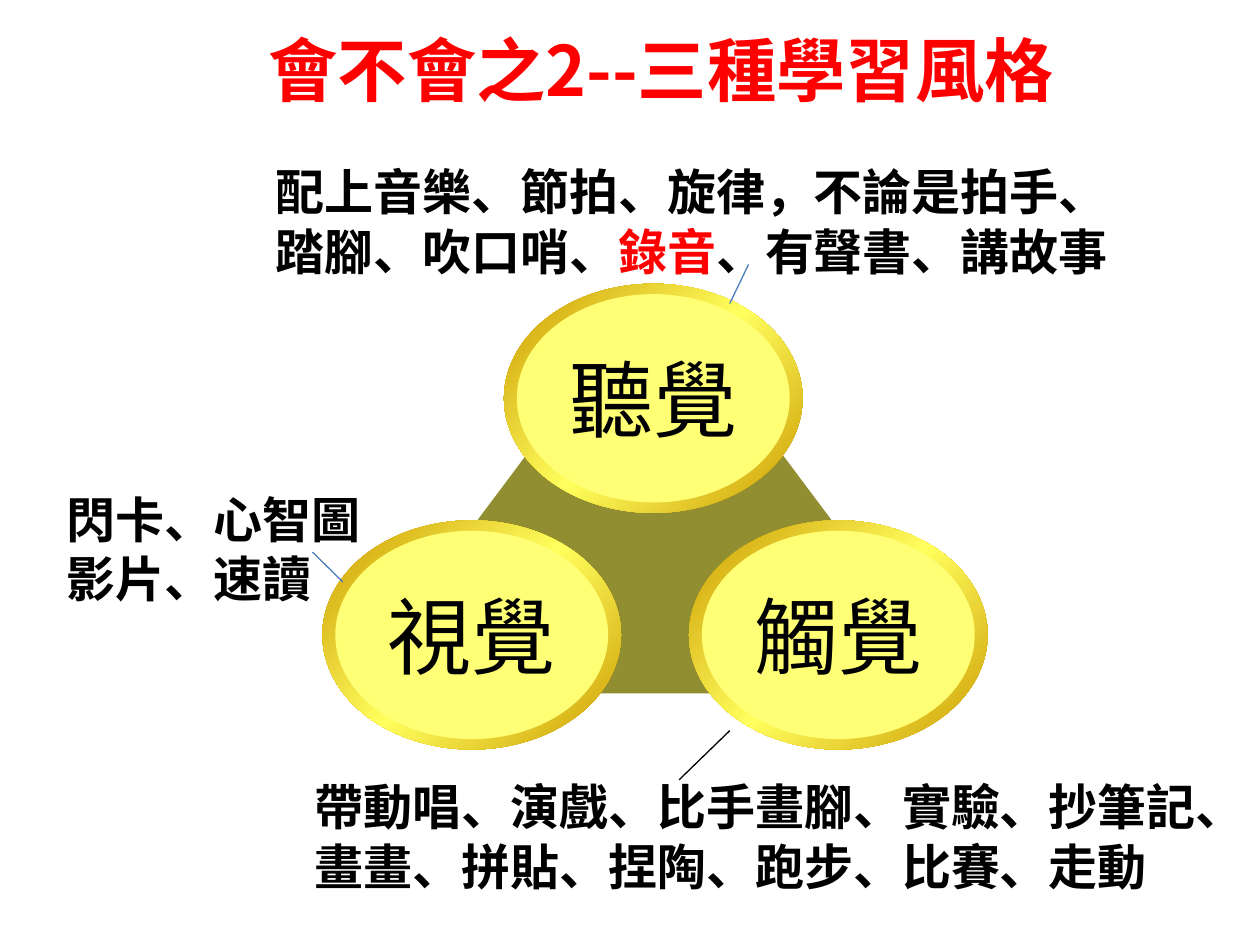
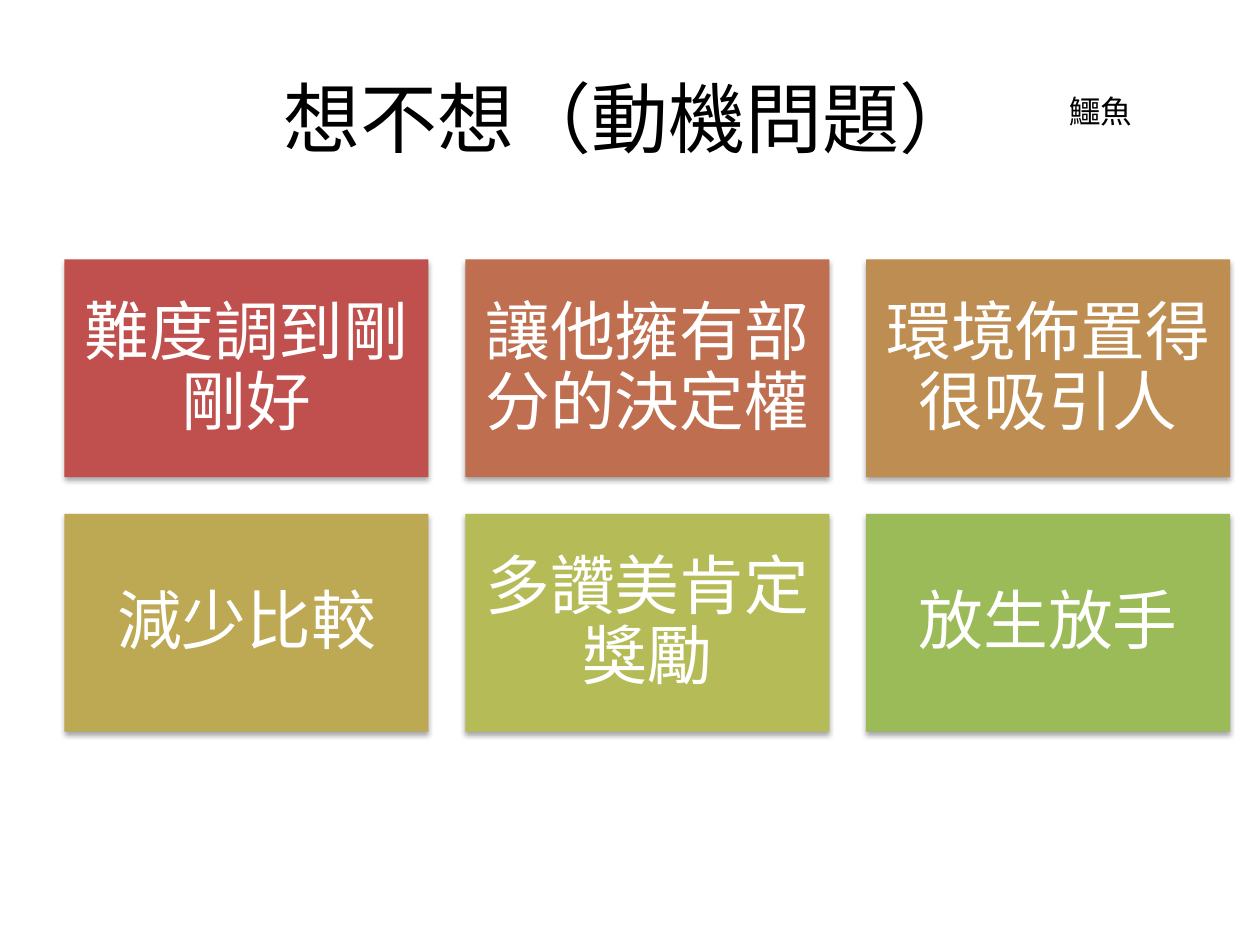
from dataclasses import dataclass
from typing import Optional

from lxml.etree import SubElement
from pptx import Presentation
from pptx.dml.color import RGBColor
from pptx.enum.shapes import MSO_CONNECTOR, MSO_SHAPE
from pptx.enum.text import MSO_ANCHOR, PP_ALIGN
from pptx.oxml.ns import qn
from pptx.util import Cm, Pt

BLACK = RGBColor(0x00, 0x00, 0x00)
WHITE = RGBColor(0xFF, 0xFF, 0xFF)
RED = RGBColor(0xFF, 0x00, 0x00)
BLUE = RGBColor(0x4B, 0x7E, 0xBC)
OLIVE = RGBColor(0x90, 0x8E, 0x30)
YELLOW = RGBColor(0xFF, 0xFF, 0x75)
RING_STOPS = ((0, "CC9900"), (50, "FFFF5D"), (100, "CC9900"))
CJK_FONT = "Noto Sans CJK SC"
LATIN_FONT = "Calibri"
RING_WIDTH, RING_HEIGHT = 6.02, 4.62
RIM_X, RIM_Y = 0.26, 0.21
TILE_WIDTH, TILE_HEIGHT, TILE_GAP = 7.34, 4.39, 0.74
TILE_LEFT, TILE_TOP, TILE_COLUMNS = 1.3, 5.23, 3


@dataclass(frozen=True)
class Frame:
    """A rectangle in centimetres."""
    left: float
    top: float
    width: float
    height: float

    def lengths(self) -> tuple:
        """Return the four sides as slide lengths."""
        return Cm(self.left), Cm(self.top), Cm(self.width), Cm(self.height)


@dataclass(frozen=True)
class Style:
    """How a run and its line look."""
    size: float
    color: RGBColor = BLACK
    bold: bool = False
    font: str = CJK_FONT
    pitch: Optional[float] = None


@dataclass(frozen=True)
class Sense:
    """A learning style and the place of its ring."""
    name: str
    left: float
    top: float


@dataclass(frozen=True)
class Note:
    """Activities, as lines of (text, colour) runs."""
    frame: Frame
    lines: tuple
    wrap: bool = True


@dataclass(frozen=True)
class Pointer:
    """A line from a ring to its note."""
    start: tuple
    end: tuple
    color: RGBColor


@dataclass(frozen=True)
class Tile:
    """A motivation tip and its fill."""
    text: str
    color: RGBColor


NOTE_STYLE = Style(28, bold=True, pitch=34)
SENSE_STYLE = Style(48, font=LATIN_FONT)
TILE_STYLE = Style(37, WHITE, pitch=40)

SENSES = (
    Sense("聽覺", 10.16, 5.72),
    Sense("視覺", 6.5, 10.49),
    Sense("觸覺", 13.89, 10.49),
)
NOTES = (
    Note(Frame(6.1, 15.52, 19.32, 2.64), (
        (("帶動唱、演戲、比手畫腳、實驗、抄筆記、", BLACK),),
        (("畫畫、拼貼、捏陶、跑步、比賽、走動", BLACK),))),
    Note(Frame(1.09, 9.73, 6.5, 2.64), (
        (("閃卡、心智圖", BLACK),),
        (("影片、速讀", BLACK),)), wrap=False),
    Note(Frame(5.31, 3.12, 17.4, 2.64), (
        (("配上音樂、節拍、旋律，不論是拍手、踏腳、吹口哨、", BLACK),
         ("錄音", RED), ("、有聲書、講故事", BLACK)),)),
)
POINTERS = (
    Pointer((14.71, 6.12), (15.09, 5.33), BLUE),
    Pointer((6.91, 11.73), (6.3, 11.13), BLUE),
    Pointer((14.71, 14.73), (13.69, 15.72), BLACK),
)
TILES = (
    Tile("難度調到剛剛好", RGBColor(0xC0, 0x50, 0x4D)),
    Tile("讓他擁有部分的決定權", RGBColor(0xBF, 0x6F, 0x4F)),
    Tile("環境佈置得很吸引人", RGBColor(0xBE, 0x8D, 0x52)),
    Tile("減少比較", RGBColor(0xBD, 0xA9, 0x54)),
    Tile("多讚美肯定獎勵", RGBColor(0xB5, 0xBC, 0x57)),
    Tile("放生放手", RGBColor(0x9B, 0xBB, 0x59)),
)


def write_lines(shape, lines: tuple, style: Style, align=PP_ALIGN.LEFT,
                anchor=MSO_ANCHOR.TOP, wrap: bool = True) -> None:
    """Fill a shape with lines of (text, colour) runs."""
    text_frame = shape.text_frame
    text_frame.word_wrap = wrap
    text_frame.vertical_anchor = anchor
    for index, line in enumerate(lines):
        para = text_frame.add_paragraph() if index else text_frame.paragraphs[0]
        para.alignment = align
        if style.pitch:
            para.line_spacing = Pt(style.pitch)
        for text, color in line:
            span = para.add_run()
            span.text = text
            span.font.size = Pt(style.size)
            span.font.bold = style.bold
            span.font.color.rgb = color
            span.font.name = style.font
            if style.font == CJK_FONT:
                east_asian = SubElement(span.font._element, qn("a:ea"))
                east_asian.set("typeface", style.font)


def write_centred(shape, text: str, style: Style, wrap: bool = True) -> None:
    """Write one line in the middle of a shape."""
    write_lines(shape, (((text, style.color),),), style,
                PP_ALIGN.CENTER, MSO_ANCHOR.MIDDLE, wrap)


def add_title(page, frame: Frame, text: str, style: Style) -> None:
    """Add a centred slide title."""
    write_centred(page.shapes.add_textbox(*frame.lengths()), text, style)


def add_solid(page, kind, frame: Frame, color: RGBColor):
    """Add a flat shape without outline."""
    shape = page.shapes.add_shape(kind, *frame.lengths())
    shape.shadow.inherit = False
    shape.line.fill.background()
    shape.fill.solid()
    shape.fill.fore_color.rgb = color
    return shape


def add_golden_fill(shape) -> None:
    """Give a shape the diagonal golden gradient."""
    shape.fill.gradient()
    shape.fill.gradient_angle = 315
    stops = shape._element.spPr.find(".//" + qn("a:gsLst"))
    for stop in list(stops):
        stops.remove(stop)
    for percent, color in RING_STOPS:
        stop = SubElement(stops, qn("a:gs"), pos=str(percent * 1000))
        SubElement(stop, qn("a:srgbClr"), val=color)


def add_drop_shadow(shape) -> None:
    """Add a soft shadow below a shape."""
    effects = shape._element.spPr.find(qn("a:effectLst"))
    shadow = SubElement(effects, qn("a:outerShdw"), blurRad=str(Pt(3.1)),
                        dist=str(Pt(1.8)), dir="5400000", rotWithShape="0")
    color = SubElement(shadow, qn("a:srgbClr"), val="000000")
    SubElement(color, qn("a:alpha"), val="35000")


def add_sense(page, sense: Sense) -> None:
    """Add a golden ring around a named disc."""
    ring_frame = Frame(sense.left, sense.top, RING_WIDTH, RING_HEIGHT)
    add_golden_fill(add_solid(page, MSO_SHAPE.OVAL, ring_frame, YELLOW))
    disc_frame = Frame(sense.left + RIM_X, sense.top + RIM_Y,
                       RING_WIDTH - 2 * RIM_X, RING_HEIGHT - 2 * RIM_Y)
    disc = add_solid(page, MSO_SHAPE.OVAL, disc_frame, YELLOW)
    write_centred(disc, sense.name, SENSE_STYLE, wrap=False)


def add_pointer(page, pointer: Pointer) -> None:
    """Add a thin straight line."""
    ends = [Cm(value) for value in pointer.start + pointer.end]
    line = page.shapes.add_connector(MSO_CONNECTOR.STRAIGHT, *ends)
    line.line.color.rgb = pointer.color
    line.line.width = Pt(0.75)
    SubElement(line._element.spPr, qn("a:effectLst"))


def add_tile(page, index: int, tile: Tile) -> None:
    """Add a tip at its place in the grid."""
    row, column = divmod(index, TILE_COLUMNS)
    frame = Frame(TILE_LEFT + column * (TILE_WIDTH + TILE_GAP),
                  TILE_TOP + row * (TILE_HEIGHT + TILE_GAP),
                  TILE_WIDTH, TILE_HEIGHT)
    box = add_solid(page, MSO_SHAPE.RECTANGLE, frame, tile.color)
    add_drop_shadow(box)
    text_frame = box.text_frame
    text_frame.margin_left = text_frame.margin_right = Cm(0.38)
    text_frame.margin_top = text_frame.margin_bottom = Cm(0.38)
    write_centred(box, tile.text, TILE_STYLE)


def build_styles_page(page) -> None:
    """Draw the three learning styles."""
    add_title(page, Frame(1.9, 0.25, 22.86, 2.26), "會不會之2--三種學習風格",
              Style(39.6, RED, bold=True))
    add_solid(page, MSO_SHAPE.ISOSCELES_TRIANGLE,
              Frame(7.01, 5.72, 12.37, 8.26), OLIVE)
    for sense in SENSES:
        add_sense(page, sense)
    for note in NOTES:
        box = page.shapes.add_textbox(*note.frame.lengths())
        write_lines(box, note.lines, NOTE_STYLE, wrap=note.wrap)
    for pointer in POINTERS:
        add_pointer(page, pointer)


def build_motivation_page(page) -> None:
    """Draw the motivation tips."""
    add_title(page, Frame(1.27, 0.76, 22.86, 3.18), "想不想（動機問題）", Style(44))
    for index, tile in enumerate(TILES):
        add_tile(page, index, tile)
    label = page.shapes.add_textbox(*Frame(21.31, 1.73, 1.8, 1.02).lengths())
    write_lines(label, ((("鱷魚", BLACK),),), Style(18, font=LATIN_FONT), wrap=False)


def main() -> None:
    """Build and save the deck."""
    deck = Presentation()
    deck.slide_width, deck.slide_height = Cm(25.4), Cm(19.05)
    for build_page in (build_styles_page, build_motivation_page):
        build_page(deck.slides.add_slide(deck.slide_layouts[6]))
    deck.save("out.pptx")


if __name__ == "__main__":
    main()
